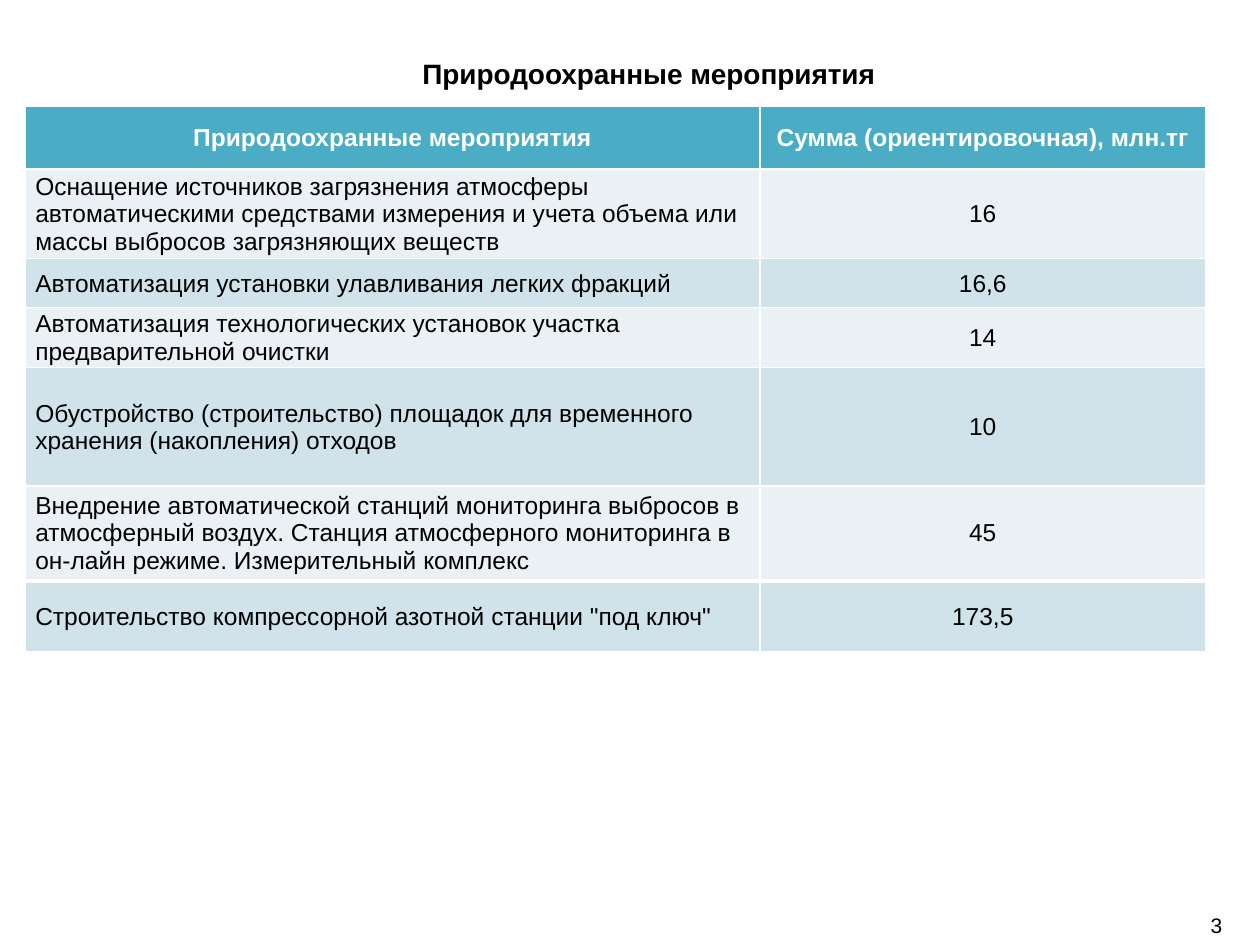
from lxml.etree import SubElement
from pptx import Presentation
from pptx.dml.color import RGBColor
from pptx.enum.text import MSO_ANCHOR as Anchor, MSO_AUTO_SIZE as AutoSize, PP_ALIGN as Align
from pptx.oxml.ns import qn
from pptx.util import Inches, Pt

BLACK = RGBColor(0x00, 0x00, 0x00)
WHITE = RGBColor(0xFF, 0xFF, 0xFF)
TEAL = RGBColor(0x4B, 0xAC, 0xC6)
PALE = RGBColor(0xE9, 0xF1, 0xF5)
LIGHT = RGBColor(0xD0, 0xE3, 0xEA)

COLUMNS = (5.83, 3.54)
HEADER = ("Природоохранные мероприятия", "Сумма (ориентировочная), млн.тг")
MEASURES = [
    ("Оснащение источников загрязнения атмосферы автоматическими средствами измерения "
     "и учета объема или массы выбросов загрязняющих веществ", "16"),
    ("Автоматизация установки улавливания легких фракций", "16,6"),
    ("Автоматизация технологических установок участка предварительной очистки", "14"),
    ("Обустройство (строительство) площадок для временного хранения (накопления) отходов", "10"),
    ("Внедрение автоматической станций мониторинга выбросов в атмосферный воздух. "
     "Станция атмосферного мониторинга в он-лайн режиме. Измерительный комплекс", "45"),
]
COMPRESSOR = ('Строительство компрессорной азотной станции "под ключ"', "173,5")


class SlideBuilder:
    font_name = "Arial"

    def __init__(self, slide):
        self.slide = slide

    def set_text(self, frame, text, size, align, color=BLACK, bold=False):
        frame.text = text
        frame.word_wrap = True
        paragraph = frame.paragraphs[0]
        paragraph.alignment = align
        font = paragraph.runs[0].font
        font.color.rgb = color
        for key, value in {"name": self.font_name, "size": Pt(size), "bold": bold}.items():
            setattr(font, key, value)

    def place(self, shape, left, top, width, height):
        box = {"left": left, "top": top, "width": width, "height": height}
        for key, value in box.items():
            setattr(shape, key, Inches(value))

    def title(self, text, *box):
        heading = self.slide.shapes.title
        self.place(heading, *box)
        frame = heading.text_frame
        frame.auto_size = AutoSize.NONE
        frame.vertical_anchor = Anchor.MIDDLE
        self.set_text(frame, text, 16, Align.CENTER, bold=True)

    def page_number(self, text, *box):
        frame = self.slide.shapes.add_textbox(*map(Inches, box)).text_frame
        frame.vertical_anchor = Anchor.MIDDLE
        self.set_text(frame, text, 12, Align.RIGHT)

    def borders(self, cell, top, bottom):
        properties = cell._tc.get_or_add_tcPr()
        for side, width in {"lnL": 1, "lnR": 1, "lnT": top, "lnB": bottom}.items():
            line = SubElement(properties, qn(f"a:{side}"), w=str(Pt(width)))
            fill = SubElement(line, qn("a:solidFill"))
            SubElement(fill, qn("a:srgbClr"), val=str(WHITE))

    def table(self, rows, heights, left, top, fills, header=False):
        table = self.slide.shapes.add_table(
            len(rows), len(COLUMNS), Inches(left), Inches(top),
            Inches(sum(COLUMNS)), Inches(sum(heights))).table
        table.first_row = header
        table.horz_banding = False
        for column, width in zip(table.columns, COLUMNS):
            column.width = Inches(width)
        for index, (row, height) in enumerate(zip(rows, heights)):
            table.rows[index].height = Inches(height)
            heading = header and index == 0
            for position, text in enumerate(row):
                cell = table.cell(index, position)
                label = position == 0 and not heading
                self.borders(cell, 1.5 if header and index == 1 else 1, 1.5 if heading else 1)
                cell.fill.solid()
                cell.fill.fore_color.rgb = fills[index]
                layout = {"margin_left": Inches(0.08 if label else 0.01),
                          "margin_top": Inches(0.01), "margin_right": Inches(0.01),
                          "margin_bottom": 0, "vertical_anchor": Anchor.MIDDLE}
                for key, value in layout.items():
                    setattr(cell, key, value)
                self.set_text(cell.text_frame, text, 14, Align.LEFT if label else Align.CENTER,
                              WHITE if heading else BLACK, heading)


def main():
    deck = Presentation()
    deck.slide_width, deck.slide_height = Inches(10), Inches(7.5)
    builder = SlideBuilder(deck.slides.add_slide(deck.slide_layouts[5]))
    builder.page_number("3", 7.44, 7.18, 2.36, 0.32)
    builder.title("Природоохранные мероприятия", 0.43, 0.36, 9.44, 0.44)
    bands = [(PALE, LIGHT)[index % 2] for index in range(len(MEASURES))]
    builder.table([HEADER] + MEASURES, (0.5, 0.67, 0.39, 0.45, 0.94, 0.74),
                  0.2, 0.84, [TEAL] + bands, header=True)
    builder.table([COMPRESSOR], (0.55,), 0.2, 4.62, [LIGHT])
    deck.save("out.pptx")


if __name__ == "__main__":
    main()
